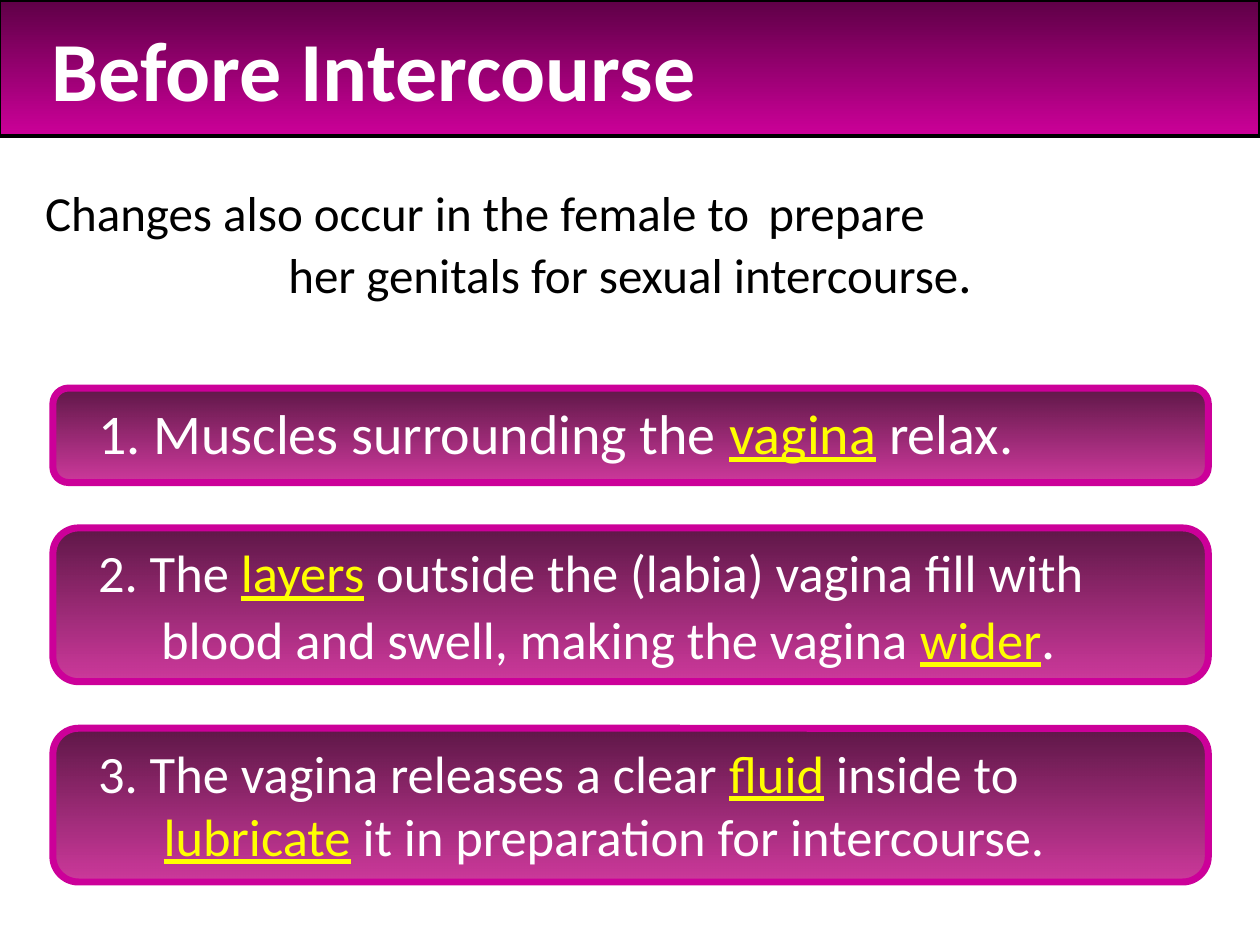
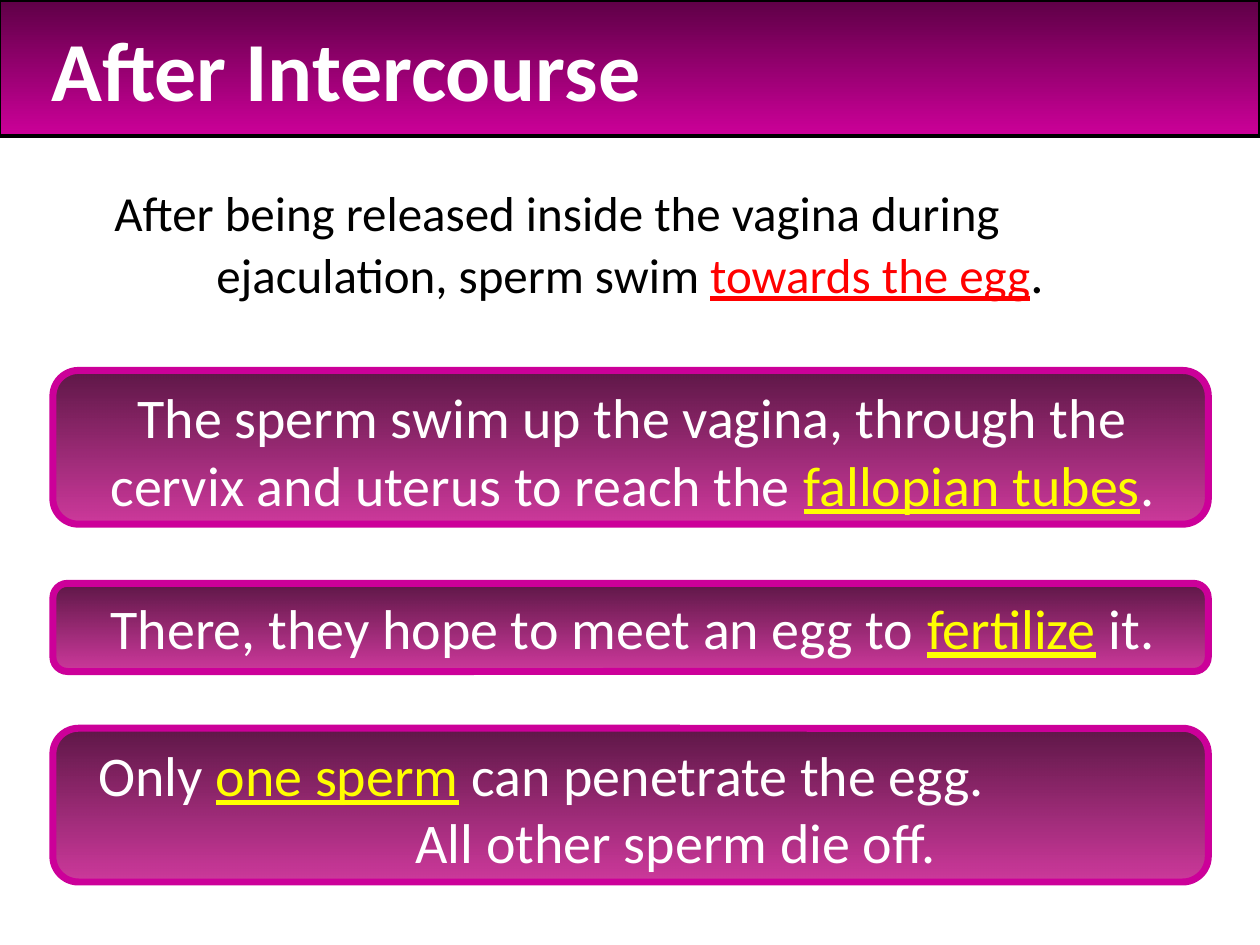
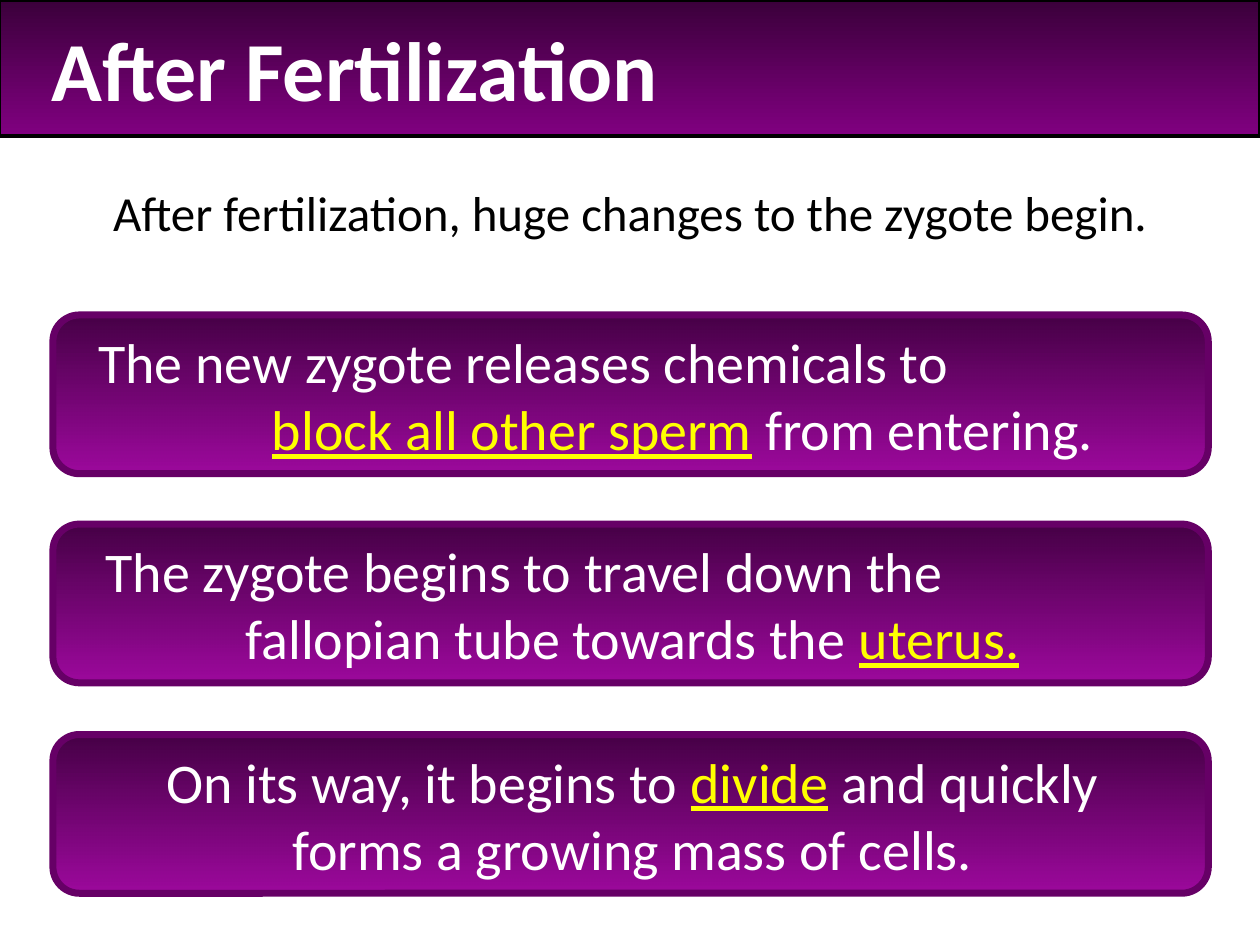
from dataclasses import dataclass
from typing import Optional

from lxml import etree
from pptx import Presentation
from pptx.dml.color import RGBColor
from pptx.enum.shapes import MSO_SHAPE
from pptx.enum.text import MSO_ANCHOR, PP_ALIGN
from pptx.oxml.ns import qn
from pptx.util import Inches, Pt

RECTANGLE = MSO_SHAPE.RECTANGLE
ROUNDED = MSO_SHAPE.ROUNDED_RECTANGLE
MIDDLE = MSO_ANCHOR.MIDDLE
LEFT, CENTER = PP_ALIGN.LEFT, PP_ALIGN.CENTER

WHITE = RGBColor(0xFF, 0xFF, 0xFF)
BLACK = RGBColor(0, 0, 0)
YELLOW = RGBColor(0xFF, 0xFF, 0)
RED = RGBColor(0xFF, 0, 0)
FONT = "Calibri"
SLIDE_WIDTH = 10
CARD_LEFT, CARD_WIDTH = 0.42, 9.17
CARD_TEXT_INSET = 0.26


@dataclass
class Palette:
    banner_top: RGBColor
    banner_bottom: RGBColor
    card_top: RGBColor
    card_bottom: RGBColor
    card_border: RGBColor


PINK = Palette(RGBColor(0x5E, 0, 0x46), RGBColor(0xCC, 0, 0x99),
               RGBColor(0x5E, 0x18, 0x47), RGBColor(0xCC, 0x33, 0x99),
               RGBColor(0xCC, 0, 0x99))
PURPLE = Palette(RGBColor(0x3B, 0, 0x3B), RGBColor(0x80, 0, 0x80),
                 RGBColor(0x47, 0, 0x47), RGBColor(0x99, 0, 0x99),
                 RGBColor(0x66, 0, 0x66))


@dataclass
class Line:
    text: str
    indent: Optional[float] = None
    hanging: float = 0
    tab: float = 0
    stop_size: int = 0


@dataclass
class Card:
    top: float
    height: float
    lines: list
    size: int = 32


def paint(shape, top_color, bottom_color, border, border_width):
    shape.shadow.inherit = False
    shape.fill.gradient()
    shape.fill.gradient_angle = 270
    for stop, color in zip(shape.fill.gradient_stops, (top_color, bottom_color)):
        stop.color.rgb = color
    shape.line.color.rgb = border
    shape.line.width = Pt(border_width)


def write_line(paragraph, line, size, color, key_color):
    paragraph.alignment = CENTER if line.indent is None else LEFT
    paragraph.font.name = FONT
    paragraph.font.size = Pt(size)
    properties = paragraph._p.get_or_add_pPr()
    properties.set("marL", str(Inches(line.hanging)))
    properties.set("indent", str(Inches((line.indent or 0) - line.hanging)))
    if line.tab:
        tabs = etree.Element(qn("a:tabLst"))
        etree.SubElement(tabs, qn("a:tab"), pos=str(Inches(line.tab)), algn="l")
        properties.insert(0, tabs)
    for position, part in enumerate(line.text.split("*")):
        if part:
            is_key = position % 2 == 1
            run = paragraph.add_run()
            run.text = part
            run.font.color.rgb = key_color if is_key else color
            run.font.underline = is_key
    if line.stop_size:
        full_stop = paragraph.add_run()
        full_stop.text = "."
        full_stop.font.size = Pt(line.stop_size)
        full_stop.font.color.rgb = color


def add_lines(shapes, box, lines, size, color, key_color):
    frame = shapes.add_textbox(*map(Inches, box)).text_frame
    frame.word_wrap = True
    for number, line in enumerate(lines):
        paragraph = frame.add_paragraph() if number else frame.paragraphs[0]
        write_line(paragraph, line, size, color, key_color)


def add_banner(slide, title, palette):
    banner = slide.shapes.add_shape(
        RECTANGLE, 0, 0, Inches(SLIDE_WIDTH), Inches(1.08))
    paint(banner, palette.banner_top, palette.banner_bottom, BLACK, 1.75)
    banner.text_frame.vertical_anchor = MIDDLE
    heading = banner.text_frame.paragraphs[0]
    heading.text = title
    heading.alignment = LEFT
    heading.font.name = FONT
    heading.font.size = Pt(48)
    heading.font.bold = True
    heading.font.color.rgb = WHITE
    heading._p.get_or_add_pPr().set("marL", str(Inches(0.31)))


def add_card(slide, card, palette):
    group = slide.shapes.add_group_shape()
    panel = group.shapes.add_shape(
        ROUNDED, *map(Inches, (CARD_LEFT, card.top, CARD_WIDTH, card.height)))
    paint(panel, palette.card_top, palette.card_bottom, palette.card_border, 4)
    last_color = panel._element.xpath(".//a:gs[last()]/a:srgbClr")[0]
    etree.SubElement(last_color, qn("a:alpha"), val="97000")
    gap = 0.03 if card.height < 1 else 0.05
    box = (CARD_LEFT + CARD_TEXT_INSET, card.top + gap, 8.68, card.height - 2 * gap)
    add_lines(group.shapes, box, card.lines, card.size, WHITE, YELLOW)


def add_topic(presentation, title, palette, intro, cards):
    slide = presentation.slides.add_slide(presentation.slide_layouts[6])
    add_banner(slide, title, palette)
    intro_box = (0, 1.4, SLIDE_WIDTH, 0.57 if len(intro) == 1 else 1.1)
    add_lines(slide.shapes, intro_box, intro, 28, BLACK, RED)
    for card in cards:
        add_card(slide, card, palette)


TOPICS = [
    ("Before Intercourse", PINK, [
        Line("Changes also occur in the female to\tprepare", 0.26, tab=8.31),
        Line("her genitals for sexual intercourse", stop_size=30),
    ], [
        Card(3.08, 0.75, [Line("1. Muscles surrounding the *vagina* relax.", 0)]),
        Card(4.19, 1.22, [
            Line("2. The *layers* outside the (labia) vagina fill with blood and "
                 "swell, making the vagina *wider*", 0, hanging=0.5, stop_size=32),
        ], 30),
        Card(5.78, 1.22, [
            Line("3. The vagina releases a clear *fluid* inside to *lubricate* "
                 "it in preparation for intercourse.", 0, hanging=0.52),
        ], 30),
    ]),
    ("After Intercourse", PINK, [
        Line("After being released inside the vagina during", 0.81),
        Line("ejaculation, sperm swim *towards the egg*", stop_size=30),
    ], [
        Card(2.94, 1.22, [
            Line("The sperm swim up the vagina, through the cervix and uterus "
                 "to reach the *fallopian tubes*."),
        ]),
        Card(4.63, 0.7, [
            Line("There, they hope to meet an egg to *fertilize* it."),
        ]),
        Card(5.78, 1.22, [
            Line("Only *one sperm* can penetrate the egg.", 0),
            Line("All other sperm die off.", 2.52),
        ]),
    ]),
    ("After Fertilization", PURPLE, [
        Line("After fertilization, huge changes to the zygote begin."),
    ], [
        Card(2.5, 1.26, [
            Line("The new zygote releases chemicals to", 0),
            Line("*block all other sperm* from entering.", 1.38),
        ]),
        Card(4.16, 1.26, [
            Line("The zygote begins to travel down the", 0.06),
            Line("fallopian tube towards the *uterus.*"),
        ]),
        Card(5.83, 1.26, [
            Line("On its way, it begins to *divide* and quickly forms a "
                 "growing mass of cells."),
        ]),
    ]),
]


def main():
    presentation = Presentation()
    presentation.slide_width = Inches(SLIDE_WIDTH)
    presentation.slide_height = Inches(7.5)
    for topic in TOPICS:
        add_topic(presentation, *topic)
    presentation.save("out.pptx")


if __name__ == "__main__":
    main()
